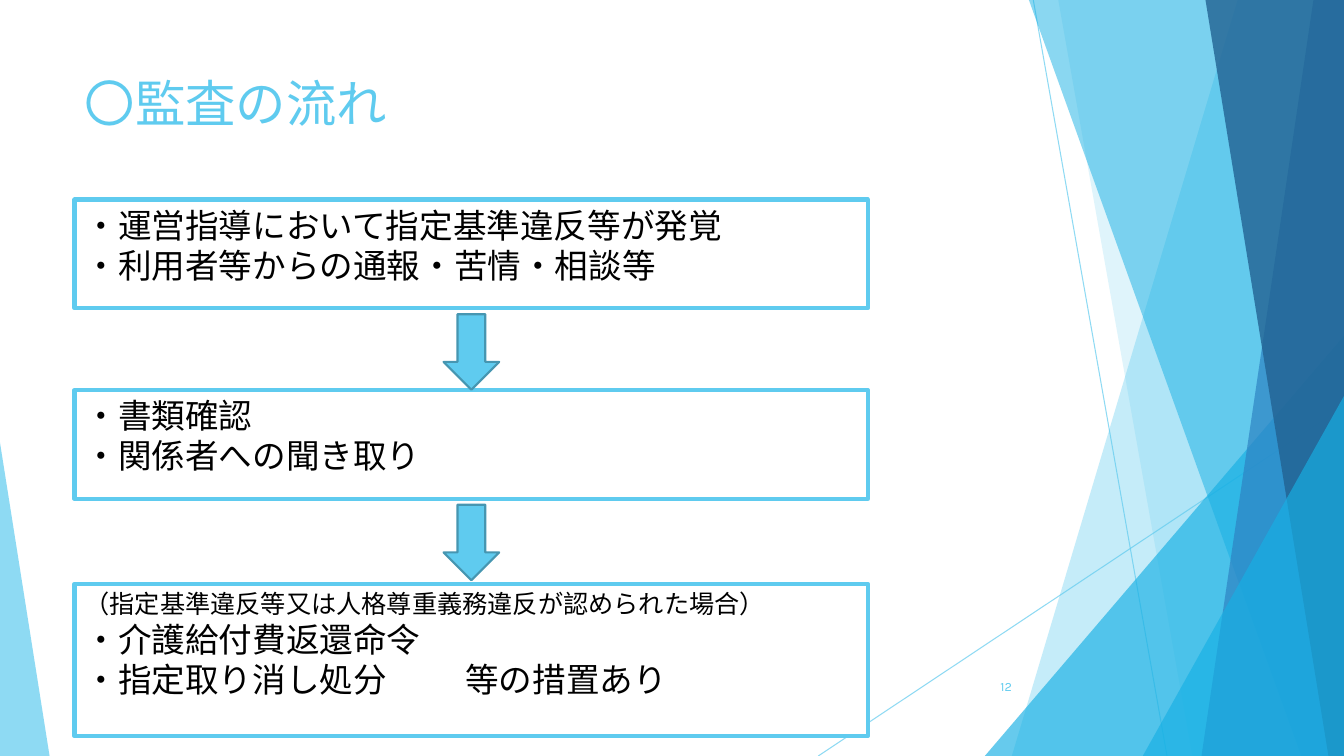
from lxml.etree import SubElement
from pptx import Presentation
from pptx.dml.color import RGBColor
from pptx.enum.shapes import MSO_CONNECTOR, MSO_SHAPE
from pptx.enum.text import MSO_ANCHOR, PP_ALIGN
from pptx.oxml.ns import qn
from pptx.util import Cm, Pt

FONT = "Karla"
W, H = 33.87, 19.05
COLORS = {
    "sky": "5FCBEF", "cyan": "17B0E4", "blue": "2E83C3", "navy": "226292",
    "edge": "4696B1", "white": "FFFFFF", "black": "000000",
}

TITLE = "〇監査の流れ"
PAGE = "12"
# (top, height, [(text, size)])
STEPS = [
    (5.03, 2.74, [("・運営指導において指定基準違反等が発覚", 24),
                  ("・利用者等からの通報・苦情・相談等", 24)]),
    (9.83, 2.74, [("・書類確認", 24), ("・関係者への聞き取り", 24)]),
    (14.71, 3.84, [("（指定基準違反等又は人格尊重義務違反が認められた場合）", 18),
                   ("・介護給付費返還命令", 24),
                   ("・指定取り消し処分\t等の措置あり", 24)]),
]
BOX_LEFT, BOX_W = 1.88, 19.99
ARROW_LEFT, ARROW_W, ARROW_H, ARROW_GAP = 11.18, 1.4, 1.9, 0.15
TAB_STOP = 9.6

# Background, back to front
RAYS = [(26.04, 0, 29.41, H), (W, 10.24, 20.62, H)]
# band: x at top, x at bottom; triangle: left, top, width, apex position
FACETS = [
    ("band", (31.19, 25.5), "sky", 36),
    ("band", (26.67, 30.05), "sky", 20),
    ("triangle", (24.82, 8.46, 9.05, 1), "cyan", 66),
    ("band", (25.93, 32.79), "cyan", 50),
    ("band", (33.1, 30.28), "blue", 70),
    ("band", (30.38, 33.48), "navy", 80),
    ("triangle", (28.8, 9.98, 5.07, 1), "cyan", 66),
    ("triangle", (0, 11.15, 1.25, 0), "sky", 70),
]


def rgb(name):
    return RGBColor.from_string(COLORS[name])


def set_alpha(fill_parent, percent):
    clr = fill_parent.find(".//" + qn("a:srgbClr"))
    SubElement(clr, qn("a:alpha")).set("val", str(percent * 1000))


def paint(shape, fill, line=None, width=0):
    shape.shadow.inherit = False
    shape.fill.solid()
    shape.fill.fore_color.rgb = rgb(fill)
    if line:
        shape.line.color.rgb = rgb(line)
        shape.line.width = Pt(width)
    else:
        shape.line.fill.background()


def add_text(p, text, size, color, align=PP_ALIGN.LEFT):
    p.alignment = align
    r = p.add_run()
    r.text = text
    r.font.size = Pt(size)
    r.font.name = FONT
    r.font.color.rgb = rgb(color)
    SubElement(r._r.get_or_add_rPr(), qn("a:ea")).set("typeface", FONT)


def add_ray(s, ends):
    ray = s.shapes.add_connector(MSO_CONNECTOR.STRAIGHT, *map(Cm, ends))
    ray.line.color.rgb = rgb("sky")
    ray.line.width = Pt(0.75)
    set_alpha(ray.line._ln, 70)
    SubElement(ray._element.spPr, qn("a:effectLst"))


def add_facet(s, kind, geometry, color, alpha):
    if kind == "band":
        top_x, bottom_x = geometry
        builder = s.shapes.build_freeform(Cm(top_x), 0)
        corners = [(W, 0), (W, H), (bottom_x, H)]
        builder.add_line_segments([(Cm(x), Cm(y)) for x, y in corners])
        facet = builder.convert_to_shape()
    else:
        left, top, width, apex = geometry
        facet = s.shapes.add_shape(MSO_SHAPE.ISOSCELES_TRIANGLE, Cm(left),
                                   Cm(top), Cm(width), Cm(H - top))
        facet.adjustments[0] = apex
    paint(facet, color)
    set_alpha(facet._element.spPr, alpha)


def add_step(s, top, height, lines):
    box = s.shapes.add_shape(MSO_SHAPE.RECTANGLE, Cm(BOX_LEFT), Cm(top),
                             Cm(BOX_W), Cm(height))
    paint(box, "white", "sky", 3)
    tf = box.text_frame
    tf.word_wrap = True
    tf.vertical_anchor = MSO_ANCHOR.TOP
    for i, (text, size) in enumerate(lines):
        p = tf.add_paragraph() if i else tf.paragraphs[0]
        add_text(p, text, size, "black")
        if "\t" in text:
            tabs = SubElement(p._p.get_or_add_pPr(), qn("a:tabLst"))
            tab = SubElement(tabs, qn("a:tab"))
            tab.set("pos", str(Cm(TAB_STOP)))
            tab.set("algn", "l")


def add_arrow(s, top):
    arrow = s.shapes.add_shape(MSO_SHAPE.DOWN_ARROW, Cm(ARROW_LEFT), Cm(top),
                               Cm(ARROW_W), Cm(ARROW_H))
    paint(arrow, "sky", "edge", 1.5)


def main():
    prs = Presentation()
    prs.slide_width, prs.slide_height = Cm(W), Cm(H)
    s = prs.slides.add_slide(prs.slide_layouts[5])

    for ends in RAYS:
        add_ray(s, ends)
    for facet in FACETS:
        add_facet(s, *facet)

    title = s.shapes.title
    title.left, title.top = Cm(BOX_LEFT), Cm(1.7)
    title.width, title.height = Cm(23.88), Cm(3.66)
    title.text_frame.vertical_anchor = MSO_ANCHOR.TOP
    add_text(title.text_frame.paragraphs[0], TITLE, 36, "sky")

    number = s.shapes.add_textbox(Cm(23.85), Cm(16.79), Cm(1.9), Cm(1.02))
    number.text_frame.word_wrap = True
    number.text_frame.vertical_anchor = MSO_ANCHOR.MIDDLE
    add_text(number.text_frame.paragraphs[0], PAGE, 9, "sky", PP_ALIGN.RIGHT)

    for step in STEPS:
        add_step(s, *step)
    for top, height, _ in STEPS[:-1]:
        add_arrow(s, top + height + ARROW_GAP)

    prs.save("out.pptx")


if __name__ == "__main__":
    main()
